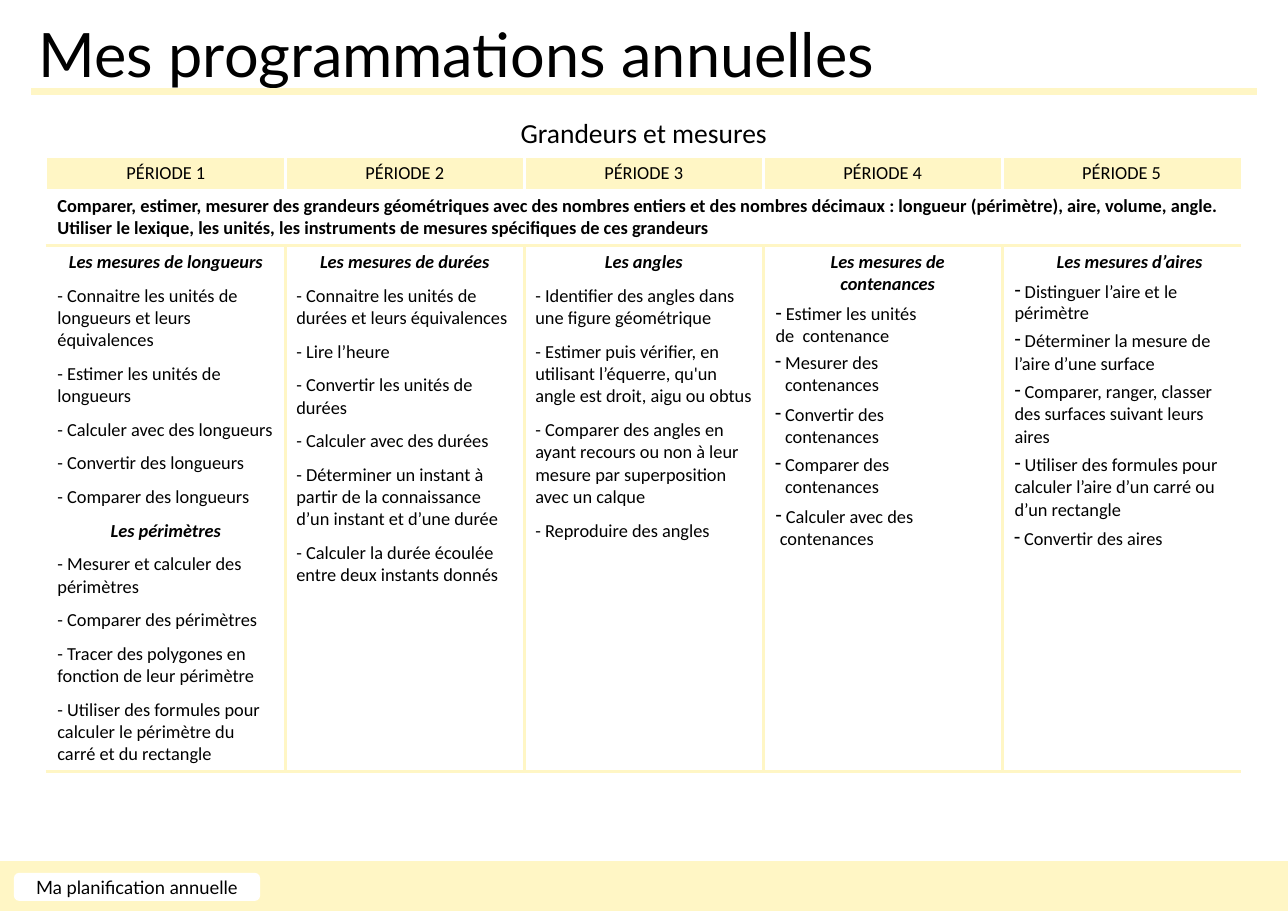
from lxml.etree import SubElement
from pptx import Presentation
from pptx.dml.color import RGBColor
from pptx.enum.shapes import MSO_CONNECTOR, MSO_SHAPE
from pptx.enum.text import MSO_ANCHOR, PP_ALIGN
from pptx.oxml.ns import qn
from pptx.util import Cm, Pt

hues = {"cream": "FFF6C5", "white": "FFFFFF", "black": "000000"}


def write(para, text, size=12, font="Calibri", bold=False, slant=False):
    run = para.add_run()
    run.text = text
    face = run.font
    face.name, face.size, face.bold, face.italic = font, Pt(size), bold, slant
    face.color.rgb = RGBColor.from_string(hues["black"])


def edge(cell, side, hue, width):
    line = SubElement(cell._tc.get_or_add_tcPr(), qn("a:ln" + side), w=str(Pt(width)))
    fill = SubElement(line, qn("a:solidFill"))
    SubElement(fill, qn("a:srgbClr"), val=hues[hue])


deck = Presentation()
deck.slide_width, deck.slide_height = Cm(29.7), Cm(21)
slide = deck.slides.add_slide(deck.slide_layouts[6])
shapes = slide.shapes

# Table frame
rows = [1.03, 0.77, 1.29, 12.1]
count = 5
table = shapes.add_table(len(rows), count, Cm(1.07), Cm(2.57),
                         Cm(27.55), Cm(sum(rows))).table
table.first_row = table.horz_banding = False
for col in table.columns:
    col.width = Cm(5.51)
for row, tall in zip(table.rows, rows):
    row.height = Cm(tall)
for wide in (0, 2):
    table.cell(wide, 0).merge(table.cell(wide, count - 1))

# Borders and fills: cream rules inside the body, white elsewhere
for r in range(len(rows)):
    for c in range(count):
        cell = table.cell(r, c)
        body = "cream" if r == 3 else "white"
        edge(cell, "L", body if c else "white", 2.25 if c else 1)
        edge(cell, "R", body if c < count - 1 else "white",
             2.25 if c < count - 1 else 1)
        edge(cell, "T", body, 2.25 if r == 3 else 1)
        edge(cell, "B", "cream" if r > 1 else "white", (3, 1, 2.25, 2.25)[r])
        if r == 1:
            cell.fill.solid()
            cell.fill.fore_color.rgb = RGBColor.from_string(hues["cream"])
        else:
            cell.fill.background()

# Heading rows
para = table.cell(0, 0).text_frame.paragraphs[0]
para.alignment = PP_ALIGN.CENTER
write(para, "Grandeurs et mesures", 18)
for c in range(count):
    para = table.cell(1, c).text_frame.paragraphs[0]
    para.alignment = PP_ALIGN.CENTER
    write(para, f"PÉRIODE {c + 1}")
write(table.cell(2, 0).text_frame.paragraphs[0],
      "Comparer, estimer, mesurer des grandeurs géométriques avec des nombres "
      "entiers et des nombres décimaux : longueur (périmètre), aire, volume, angle. "
      "Utiliser le lexique, les unités, les instruments de mesures spécifiques "
      "de ces grandeurs", bold=True)

# Periods 1 to 3: evenly spaced paragraphs
plain = [
    ["Les mesures de longueurs",
     "- Connaitre les unités de longueurs et leurs équivalences",
     "- Estimer les unités de longueurs",
     "- Calculer avec des longueurs",
     "- Convertir des longueurs",
     "- Comparer des longueurs",
     "Les périmètres",
     "- Mesurer et calculer des périmètres",
     "- Comparer des périmètres",
     "- Tracer des polygones en fonction de leur périmètre",
     "- Utiliser des formules pour calculer le périmètre du carré et du rectangle"],
    ["Les mesures de durées",
     "- Connaitre les unités de durées et leurs équivalences",
     "- Lire l’heure",
     "- Convertir les unités de durées",
     "- Calculer avec des durées",
     "- Déterminer un instant à partir de la connaissance d’un instant et d’une durée",
     "- Calculer la durée écoulée entre deux instants donnés"],
    ["Les angles",
     "- Identifier des angles dans une figure géométrique",
     "- Estimer puis vérifier, en utilisant l’équerre, qu'un angle est droit, "
     "aigu ou obtus",
     "- Comparer des angles en ayant recours ou non à leur mesure par "
     "superposition avec un calque",
     "- Reproduire des angles"],
]
for c, items in enumerate(plain):
    frame = table.cell(3, c).text_frame
    for i, text in enumerate(items):
        para = frame.add_paragraph() if i else frame.paragraphs[0]
        para.space_before = Pt(7.3 if i else 0)
        head = text.startswith("Les ")
        para.alignment = PP_ALIGN.CENTER if head else PP_ALIGN.LEFT
        write(para, text, bold=head, slant=head)

# Periods 4 and 5: title, its alignment and indent, right indent of the list,
# then text, left indent, first line, space before, line spacing
listed = [
    ("Les mesures de contenances", PP_ALIGN.CENTER, 0.23, 1.5, [
        (" Estimer les unités de  contenance", 0.03, 0, 5.7, Pt(13.9)),
        ("Mesurer des contenances", 0.25, -0.23, 3.2, 1.0),
        ("Convertir des contenances", 0.25, -0.23, 4.5, 1.0),
        ("Comparer des contenances", 0.25, -0.23, 3.6, 1.0),
        (" Calculer avec des contenances", 0.13, -0.1, 5.2, Pt(14.2))]),
    ("Les mesures d’aires", PP_ALIGN.LEFT, 1, 0, [
        (" Distinguer l’aire et le périmètre", 0.03, 0, 5.7, Pt(13.9)),
        (" Déterminer la mesure de l’aire d’une surface", 0.03, 0, 2.5, 1.05),
        (" Comparer, ranger, classer des surfaces suivant leurs aires",
         0.03, 0, 3.2, 1.01),
        (" Utiliser des formules pour calculer l’aire d’un carré ou d’un rectangle",
         0.03, 0, 3.5, 1.01),
        ("Convertir des aires", 0.25, -0.23, 4.5, 1.0)]),
]
for c, (title, align, left, right, items) in enumerate(listed, len(plain)):
    frame = table.cell(3, c).text_frame
    para = frame.paragraphs[0]
    para.alignment = align
    para._p.get_or_add_pPr().set("marL", str(Cm(left)))
    write(para, title, bold=True, slant=True)
    for text, left, first, before, space in items:
        para = frame.add_paragraph()
        para.space_before, para.line_spacing = Pt(before), space
        props = para._p.get_or_add_pPr()
        for key, size in (("marL", left), ("marR", right), ("indent", first)):
            props.set(key, str(Cm(size)))
        SubElement(props, qn("a:buChar"), char="-")
        write(para, text)

# Page title and rule
box = shapes.add_textbox(Cm(0.64), Cm(0.25), Cm(21.74), Cm(1.96))
box.text_frame.word_wrap = True
write(box.text_frame.paragraphs[0], "Mes programmations annuelles", 40, "Lato")
rule = shapes.add_connector(MSO_CONNECTOR.STRAIGHT, Cm(28.98), Cm(2.11),
                            Cm(0.71), Cm(2.11))
rule.line.color.rgb = RGBColor.from_string(hues["cream"])
rule.line.width = Pt(4.75)
SubElement(rule._element.spPr, qn("a:effectLst"))

# Footer band and label
for kind, hue, x, y, w, h in [
        (MSO_SHAPE.RECTANGLE, "cream", 0, 19.86, 29.7, 1.12),
        (MSO_SHAPE.ROUNDED_RECTANGLE, "white", 0.34, 20.14, 5.64, 0.61)]:
    shape = shapes.add_shape(kind, Cm(x), Cm(y), Cm(w), Cm(h))
    shape.shadow.inherit = False
    shape.fill.solid()
    shape.fill.fore_color.rgb = RGBColor.from_string(hues[hue])
    shape.line.color.rgb = RGBColor.from_string(hues[hue])
    shape.line.width = Pt(1)
label = shape.text_frame
label.margin_top = label.margin_bottom = 0
label.vertical_anchor = MSO_ANCHOR.MIDDLE
label.paragraphs[0].alignment = PP_ALIGN.CENTER
write(label.paragraphs[0], "Ma planification annuelle", 12, "Lato")

deck.save("out.pptx")
